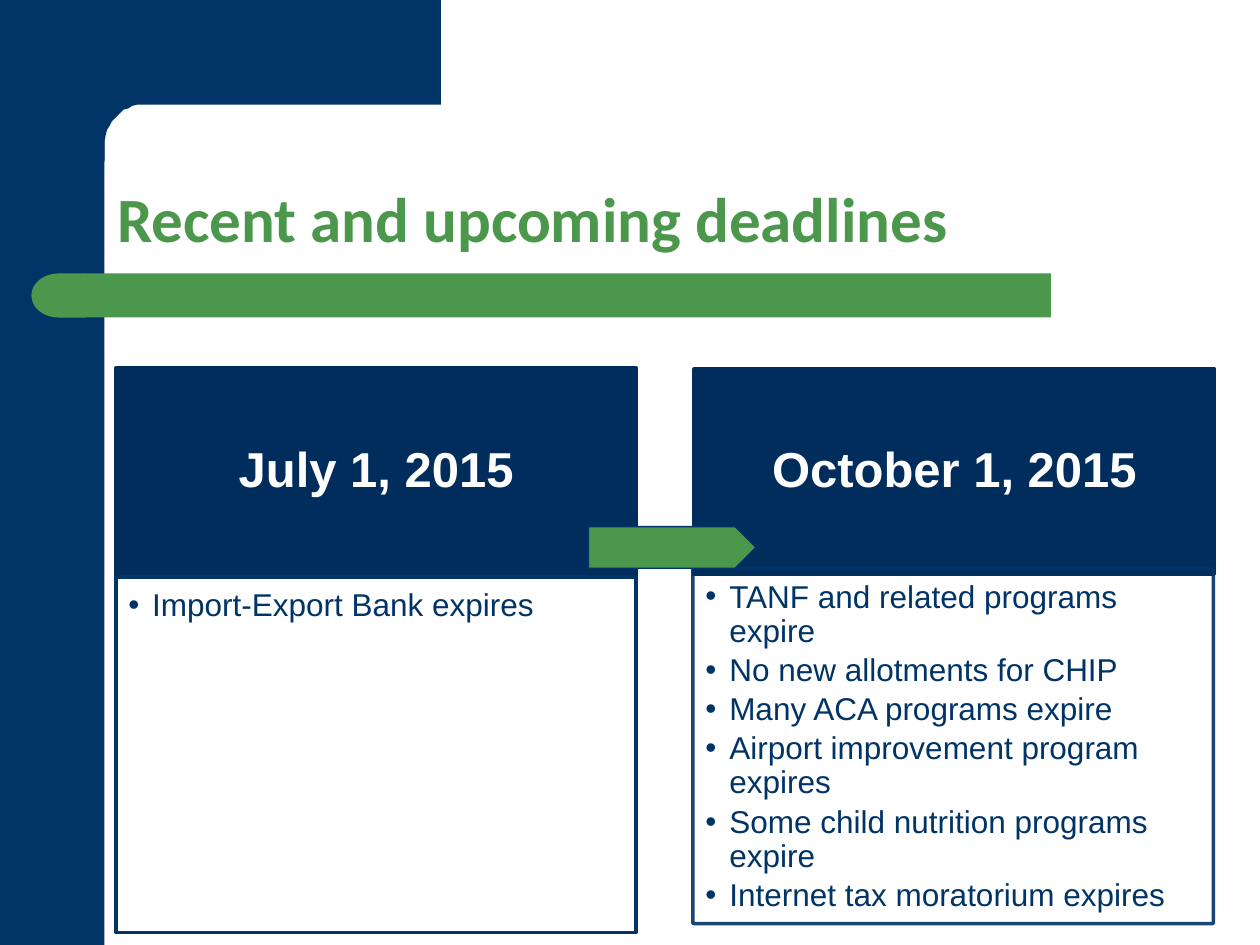
"""Build the deadlines slide: a framed title and two dated cards joined by an arrow."""
from dataclasses import dataclass
from math import cos, pi, sin

from lxml import etree
from pptx import Presentation
from pptx.dml.color import RGBColor
from pptx.enum.shapes import MSO_SHAPE
from pptx.enum.text import MSO_ANCHOR, MSO_AUTO_SIZE, PP_ALIGN
from pptx.oxml.ns import qn
from pptx.util import Pt

RECT = MSO_SHAPE.RECTANGLE
DELAY = MSO_SHAPE.FLOWCHART_DELAY
ARROW = MSO_SHAPE.PENTAGON
TOP, MIDDLE, BOTTOM = MSO_ANCHOR.TOP, MSO_ANCHOR.MIDDLE, MSO_ANCHOR.BOTTOM
LEFT, CENTER = PP_ALIGN.LEFT, PP_ALIGN.CENTER
FIXED = MSO_AUTO_SIZE.NONE
SCALE = 9144


@dataclass(frozen=True)
class Theme:
    """Colours, fonts and type sizes."""
    navy: str = "003366"
    deep: str = "002D5C"
    green: str = "4B974B"
    white: str = "FFFFFF"
    title: str = "Calibri"
    text: str = "Arial"
    big: int = 36
    head: int = 28
    body: int = 18


@dataclass(frozen=True)
class Box:
    """A place on the slide, in px of a hundredth of an inch."""
    x: int
    y: int
    w: int
    h: int

    def emu(self) -> list[int]:
        """Return the place in EMU."""
        return [n * SCALE for n in (self.x, self.y, self.w, self.h)]


@dataclass(frozen=True)
class Card:
    """A date above a list of things that fall due."""
    date: str
    items: tuple[str, ...]
    head: Box
    body: Box
    alpha: int = 100


THEME = Theme()
CARDS = (
    Card("July 1, 2015", ("Import-Export Bank expires",),
         Box(92, 292, 413, 165), Box(92, 458, 413, 282)),
    Card("October 1, 2015",
         ("TANF and related programs expire", "No new allotments for CHIP",
          "Many ACA programs expire", "Airport improvement program expires",
          "Some child nutrition programs expire",
          "Internet tax moratorium expires"),
         Box(551, 293, 413, 163), Box(550, 451, 413, 282), 90),
)


def paint(shape, fill: str = "", line: str = "", width: float = 2):
    """Set the fill and line of a shape, or clear them."""
    shape.shadow.inherit = False
    if fill:
        shape.fill.solid()
        shape.fill.fore_color.rgb = RGBColor.from_string(fill)
    else:
        shape.fill.background()
    if line:
        shape.line.color.rgb = RGBColor.from_string(line)
        shape.line.width = Pt(width)
    else:
        shape.line.fill.background()
    return shape


def add(slide, kind, box: Box, fill: str = "", line: str = "", width: float = 2):
    """Add a painted preset shape."""
    return paint(slide.shapes.add_shape(kind, *box.emu()), fill, line, width)


def write(shape, text: str, font: str, size: int, color: str, bold: bool,
          align, anchor, pads: tuple[int, int, int, int]) -> None:
    """Set the text of a shape and format all its runs."""
    frame = shape.text_frame
    frame.text = text
    frame.word_wrap = True
    frame.auto_size = FIXED
    frame.vertical_anchor = anchor
    (frame.margin_left, frame.margin_top,
     frame.margin_right, frame.margin_bottom) = [n * SCALE for n in pads]
    for para in frame.paragraphs:
        para.alignment = align
        para.line_spacing = 0.9
        for run in para.runs:
            run.font.name = font
            run.font.size = Pt(size)
            run.font.bold = bold
            run.font.color.rgb = RGBColor.from_string(color)


def bullet(para, indent: int) -> None:
    """Give a paragraph a hanging bullet."""
    para.space_after = Pt(3)
    props = para._p.get_or_add_pPr()
    props.set("marL", str(indent * SCALE))
    props.set("indent", str(-indent * SCALE))
    etree.SubElement(props, qn("a:buFont"), typeface=THEME.text)
    etree.SubElement(props, qn("a:buChar"), char="•")


def fade(shape, alpha: int) -> None:
    """Make the line of a shape partly opaque."""
    color = shape.line._ln.find(".//" + qn("a:srgbClr"))
    etree.SubElement(color, qn("a:alpha"), val=str(alpha * 1000))


def frame(slide) -> None:
    """Draw the navy corner and the green bar."""
    add(slide, RECT, Box(0, 0, 83, 750), THEME.navy)
    steps = [pi / 2 * n / 12 for n in range(13)]
    curve = [(round(113 - 30 * sin(a)), round(116 - 33 * cos(a))) for a in steps]
    edge = [(350, 0), (350, 83), *curve, (83, 128), (50, 128), (50, 0)]
    path = slide.shapes.build_freeform(*edge[0], scale=SCALE)
    path.add_line_segments(edge[1:], close=True)
    paint(path.convert_to_shape(), THEME.navy)
    add(slide, RECT, Box(67, 217, 767, 35), THEME.green)
    cap = add(slide, DELAY, Box(25, 217, 43, 35), THEME.green)
    cap._element.spPr.find(qn("a:xfrm")).set("flipH", "1")


def draw(slide, card: Card) -> None:
    """Draw one card."""
    head = add(slide, RECT, card.head, THEME.deep, THEME.deep)
    write(head, card.date, THEME.text, THEME.head, THEME.white, True,
          CENTER, MIDDLE, (22, 12, 22, 12))
    body = add(slide, RECT, card.body, line=THEME.navy)
    if card.alpha < 100:
        fade(body, card.alpha)
    write(body, "\n".join(card.items), THEME.text, THEME.body, THEME.navy,
          False, LEFT, TOP, (10, 10, 14, 16))
    for para in body.text_frame.paragraphs:
        bullet(para, 19)


def main() -> None:
    """Build and save the slide."""
    deck = Presentation()
    deck.slide_width, deck.slide_height = 1000 * SCALE, 750 * SCALE
    slide = deck.slides.add_slide(deck.slide_layouts[5])
    frame(slide)
    title = slide.shapes.title
    title.left, title.top, title.width, title.height = Box(83, 83, 867, 125).emu()
    write(title, "Recent and upcoming deadlines", THEME.title, THEME.big,
          THEME.green, True, LEFT, BOTTOM, (10, 5, 10, 5))
    for card in CARDS:
        draw(slide, card)
    add(slide, ARROW, Box(467, 418, 133, 33), THEME.green, THEME.navy, 0.75)
    deck.save("out.pptx")


if __name__ == "__main__":
    main()
